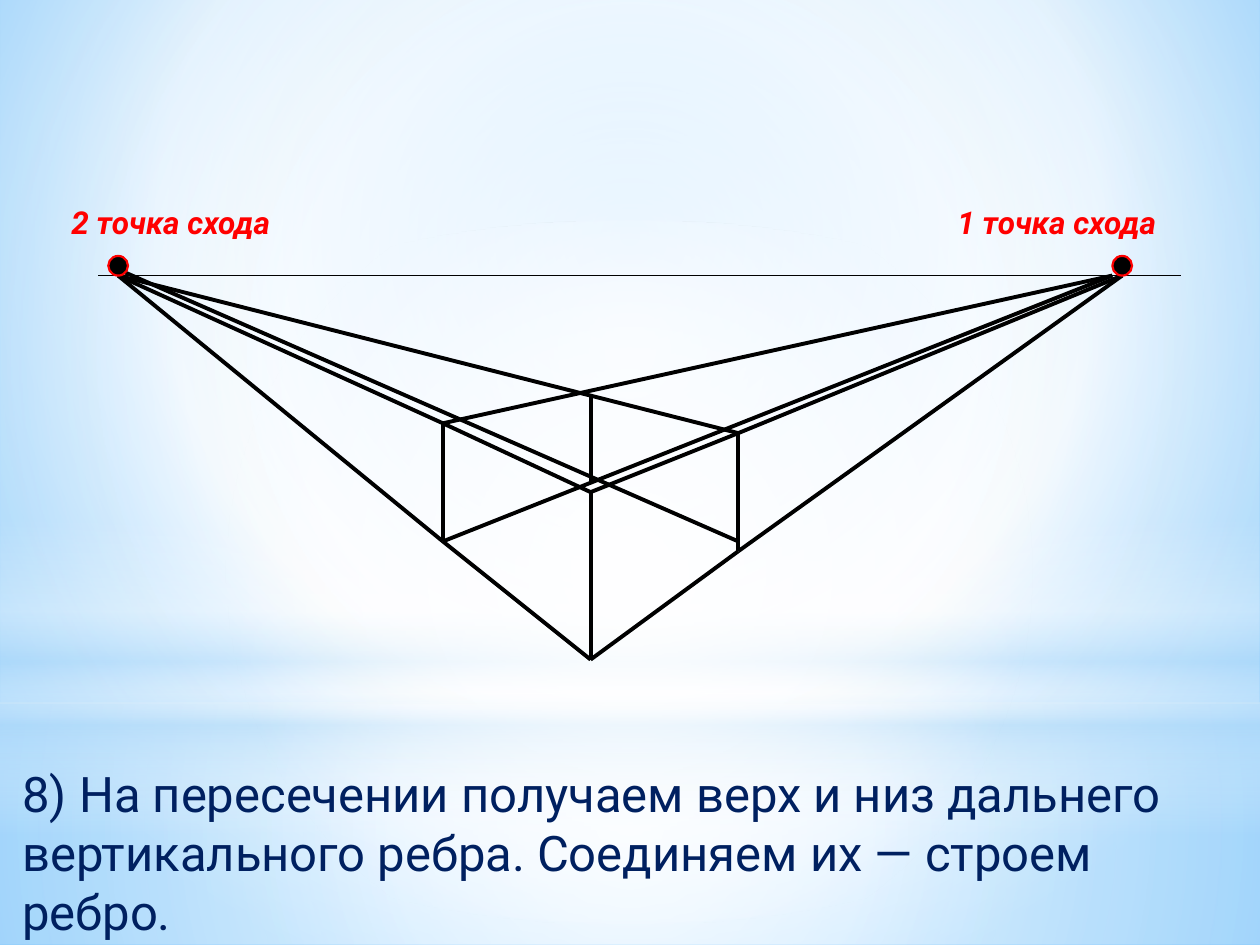
"""Build a slide on drawing the far vertical edge of a box in two-point perspective."""
import pptx
import pptx.util
import pptx.dml.color
import pptx.enum.shapes
import pptx.enum.text
import pptx.oxml.ns
import lxml.etree

Pt = pptx.util.Pt
qn = pptx.oxml.ns.qn
SHAPE = pptx.enum.shapes.MSO_SHAPE
STRAIGHT = pptx.enum.shapes.MSO_CONNECTOR.STRAIGHT


def color(value):
    return pptx.dml.color.RGBColor.from_string(value)


def set_gradient(fill, element, stops, focus):
    """Fill with (position, colour, opacity) stops: circular around focus, or vertical if None."""
    fill.gradient()
    gradient = next(element.iter(qn("a:gradFill")))
    for child in list(gradient):
        gradient.remove(child)
    stop_list = lxml.etree.SubElement(gradient, qn("a:gsLst"))
    for position, value, opacity in stops:
        stop = lxml.etree.SubElement(stop_list, qn("a:gs"), pos=str(position * 1000))
        shade = lxml.etree.SubElement(stop, qn("a:srgbClr"), val=value)
        if opacity < 100:
            lxml.etree.SubElement(shade, qn("a:alpha"), val=str(opacity * 1000))
    if focus is None:
        lxml.etree.SubElement(gradient, qn("a:lin"), ang="5400000", scaled="0")
    else:
        circle = lxml.etree.SubElement(gradient, qn("a:path"), path="circle")
        sides = {side: str(share * 1000) for side, share in zip("ltrb", focus)}
        lxml.etree.SubElement(circle, qn("a:fillToRect"), **sides)


presentation = pptx.Presentation()
presentation.slide_width = Pt(720)
presentation.slide_height = Pt(540)
slide = presentation.slides.add_slide(presentation.slide_layouts[6])

sky = [(0, "9ED5FF", 100), (60, "FFFFFF", 100), (100, "5BB9FF", 100)]
set_gradient(slide.background.fill, slide.element, sky, (20, 10, 20, 60))

center = (50, 50, 50, 50)
layers = [
    (SHAPE.RECTANGLE, 401.75, 138.25, center,
     [(0, "FFFFFF", 91), (37, "FFFFFF", 76), (100, "B4DCFA", 79)]),
    (SHAPE.RECTANGLE, 0, 401.75, center,
     [(0, "FFFFFF", 89), (48, "FFFFFF", 62), (100, "B4DCFA", 79)]),
    (SHAPE.RECTANGLE, 297, 180, None,
     [(0, "FFFFFF", 0), (29, "FFFFFF", 30), (45, "B4DCFA", 40),
      (55, "FFFFFF", 26), (65, "B4DCFA", 60), (100, "FFFFFF", 0)]),
    (SHAPE.OVAL, 126, 401.75, center, [(0, "FFFFFF", 100), (56, "FFFFFF", 0)]),
]
for kind, top, height, focus, stops in layers:
    shape = slide.shapes.add_shape(kind, 0, Pt(top), Pt(720), Pt(height))
    shape.shadow.inherit = False
    shape.line.fill.background()
    set_gradient(shape.fill, shape.element, stops, focus)

horizon = 157.5
left_vanishing = (67.5, horizon)
right_vanishing = (641.25, horizon)
right_vanishing_inner = (635.6, horizon)
near_top, near_bottom = (337.5, 281.25), (337.5, 376.9)
left_top, left_bottom = (253.1, 241.9), (253.1, 309.4)
right_top, right_bottom = (421.9, 247.5), (421.9, 315)
far_top, far_bottom = (337.5, 225), (337.5, 275.6)

lines = [
    ((56.25, horizon), (675, horizon), 0.75),
    (near_top, near_bottom, 2.25),
    (right_top, near_top, 2.25),
    (right_bottom, near_bottom, 2.25),
    (right_top, right_bottom, 2.25),
    (near_bottom, left_bottom, 2.25),
    (near_top, left_top, 2.25),
    (left_top, left_vanishing, 2.25),
    (left_top, left_bottom, 2.25),
    (left_bottom, left_vanishing, 2.25),
    (right_vanishing, right_bottom, 2.25),
    (right_vanishing, right_top, 2.25),
    (right_vanishing_inner, left_top, 2.25),
    (left_vanishing, right_top, 2.25),
    ((71, 155.5), (421.9, 309.4), 2.25),
    (right_vanishing_inner, left_bottom, 2.25),
    (far_top, far_bottom, 2.25),
]
for start, end, width in lines:
    connector = slide.shapes.add_connector(STRAIGHT, *map(Pt, start + end))
    connector.line.color.rgb = color("000000")
    connector.line.width = Pt(width)
    lxml.etree.SubElement(connector.element.spPr, qn("a:effectLst"))

dot_size = 11.25
for x, y in (right_vanishing, left_vanishing):
    dot = slide.shapes.add_shape(
        SHAPE.OVAL, Pt(x - dot_size / 2), Pt(y - dot_size), Pt(dot_size), Pt(dot_size))
    dot.shadow.inherit = False
    dot.fill.solid()
    dot.fill.fore_color.rgb = color("000000")
    dot.line.color.rgb = color("FF0000")
    dot.line.width = Pt(1.25)

step = "8) На пересечении получаем верх и низ дальнего вертикального ребра. Соединяем их — строем ребро."
texts = [
    ("2 точка схода", (33.75, 112.5, 142.5, 29), 18, "FF0000", True),
    ("1 точка схода", (540, 112.5, 142.5, 29), 18, "FF0000", True),
    (step, (5.75, 432.75, 714.25, 108.75), 28, "002060", False),
]
for text, place, size, text_color, is_label in texts:
    text_box = slide.shapes.add_textbox(*map(Pt, place))
    frame = text_box.text_frame
    frame.word_wrap = not is_label
    frame.auto_size = pptx.enum.text.MSO_AUTO_SIZE.SHAPE_TO_FIT_TEXT
    paragraph = frame.paragraphs[0]
    paragraph.text = text
    paragraph.font.name = "Roboto"
    paragraph.font.size = Pt(size)
    paragraph.font.bold = is_label
    paragraph.font.italic = is_label
    paragraph.font.color.rgb = color(text_color)

presentation.save("out.pptx")
